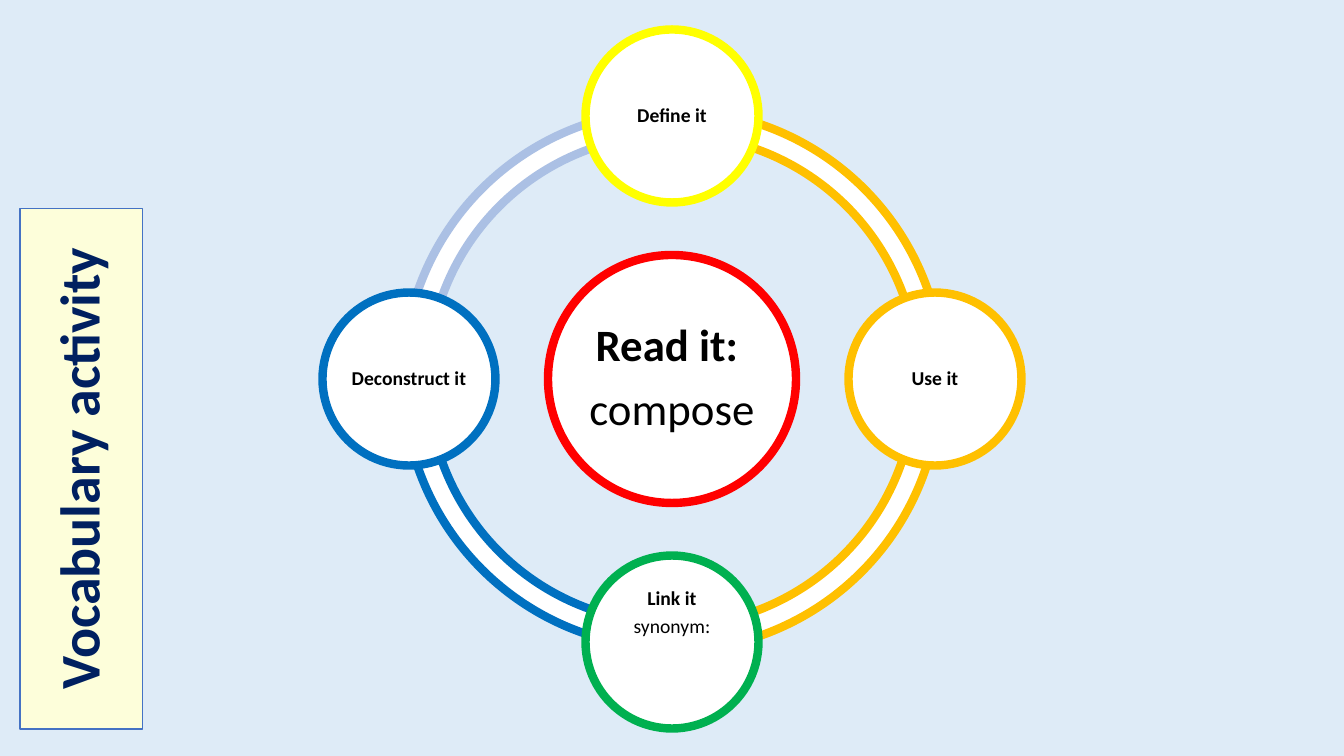
"""Build a vocabulary slide: a ring of four tasks around a central word."""
from dataclasses import dataclass

from pptx import Presentation
from pptx.dml.color import RGBColor
from pptx.enum.shapes import MSO_SHAPE
from pptx.enum.text import MSO_ANCHOR, MSO_AUTO_SIZE, PP_ALIGN
from pptx.util import Pt

WIDE, HIGH = 1344, 756
SCALE = 12192000 / WIDE
MID_X, MID_Y = 672, 379
RING, ORBIT = 538, 263
FONT = "Calibri"

SKY = RGBColor(0xDE, 0xEB, 0xF7)
WHITE = RGBColor(0xFF, 0xFF, 0xFF)
BLACK = RGBColor(0x00, 0x00, 0x00)
RED = RGBColor(0xFF, 0x00, 0x00)
YELLOW = RGBColor(0xFF, 0xFF, 0x00)
AMBER = RGBColor(0xFF, 0xC0, 0x00)
GREEN = RGBColor(0x00, 0xB0, 0x50)
BLUE = RGBColor(0x00, 0x70, 0xC0)
PALE = RGBColor(0xAB, 0xC0, 0xE4)
CREAM = RGBColor(0xFD, 0xFE, 0xDA)
NAVY = RGBColor(0x00, 0x20, 0x60)
EDGE = RGBColor(0x44, 0x72, 0xC4)


@dataclass
class Arc:
    """A quarter of the ring, starting at an angle in degrees."""
    start: int
    color: RGBColor
    dx: int = 0
    dy: int = 0


@dataclass
class Node:
    """A circle with a bold first line, placed by its offset from the middle."""
    lines: list[str]
    color: RGBColor
    dx: int = 0
    dy: int = 0
    size: int = 173
    points: int = 14
    inset: int = 2
    top: bool = False


ARCS = [
    Arc(180, PALE),
    Arc(90, BLUE),
    Arc(0, AMBER, -1, 3),
    Arc(270, AMBER, 2),
]
NODES = [
    Node(["Read it: ", "compose"], RED, size=248, points=32, inset=4),
    Node(["Define it"], YELLOW, dy=-ORBIT),
    Node(["Use it"], AMBER, dx=ORBIT),
    Node(["Link it", "synonym:"], GREEN, dy=ORBIT, top=True),
    Node(["Deconstruct it"], BLUE, dx=-ORBIT),
]


def px(count: float) -> int:
    """Turn pixels into EMU."""
    return round(count * SCALE)


def paint(shape, fill: RGBColor, line: RGBColor, width: float) -> None:
    """Give a shape a plain fill and outline."""
    shape.fill.solid()
    shape.fill.fore_color.rgb = fill
    shape.line.color.rgb = line
    shape.line.width = Pt(width)


def style(para, size: int, color: RGBColor, bold: bool) -> None:
    """Centre a paragraph and set its font."""
    para.alignment = PP_ALIGN.CENTER
    para.line_spacing = 0.9
    font = para.font
    font.name, font.size, font.bold = FONT, Pt(size), bold
    font.color.rgb = color


def place(slide, kind: MSO_SHAPE, x: int, y: int, size: int, color: RGBColor):
    """Add a white shape, centred on a point, with a thick outline."""
    shape = slide.shapes.add_shape(
        kind, px(x - size / 2), px(y - size / 2), px(size), px(size))
    shape.shadow.inherit = False
    paint(shape, WHITE, color, 6)
    return shape


def add_arc(slide, arc: Arc) -> None:
    """Draw one quarter of the ring."""
    shape = place(slide, MSO_SHAPE.BLOCK_ARC, MID_X + arc.dx, MID_Y + arc.dy,
                  RING, arc.color)
    ends = (arc.start, (arc.start + 90) % 360)
    for i, angle in enumerate(ends):
        shape.adjustments[i] = angle * 0.6
    shape.adjustments[2] = 0.046


def add_node(slide, node: Node) -> None:
    """Draw one circle with its text."""
    shape = place(slide, MSO_SHAPE.OVAL, MID_X + node.dx, MID_Y + node.dy,
                  node.size, node.color)
    frame = shape.text_frame
    frame.word_wrap = True
    frame.margin_left = frame.margin_right = px(node.inset)
    frame.margin_top = frame.margin_bottom = px(node.inset)
    frame.vertical_anchor = MSO_ANCHOR.MIDDLE
    if node.top:
        frame.vertical_anchor = MSO_ANCHOR.TOP
        frame.margin_top = px(8)
    for i, line in enumerate(node.lines):
        para = frame.add_paragraph() if i else frame.paragraphs[0]
        para.text = line
        style(para, node.points, BLACK, i == 0)
        if i:
            para.space_before = Pt(round(node.points * 0.35))


def add_title(slide) -> None:
    """Turn the title on its side at the left edge."""
    title = slide.shapes.title
    title.left, title.top = px(-179), px(407)
    title.width, title.height = px(521), px(123)
    title.rotation = 270
    paint(title, CREAM, EDGE, 0.75)
    frame = title.text_frame
    frame.text = "Vocabulary activity"
    frame.word_wrap = True
    frame.auto_size = MSO_AUTO_SIZE.NONE
    frame.vertical_anchor = MSO_ANCHOR.MIDDLE
    style(frame.paragraphs[0], 40, NAVY, True)


def main() -> None:
    """Build and save the slide."""
    deck = Presentation()
    deck.slide_width, deck.slide_height = px(WIDE), px(HIGH)
    slide = deck.slides.add_slide(deck.slide_layouts[5])
    slide.background.fill.solid()
    slide.background.fill.fore_color.rgb = SKY
    for arc in ARCS:
        add_arc(slide, arc)
    for node in NODES:
        add_node(slide, node)
    add_title(slide)
    deck.save("out.pptx")


if __name__ == "__main__":
    main()
